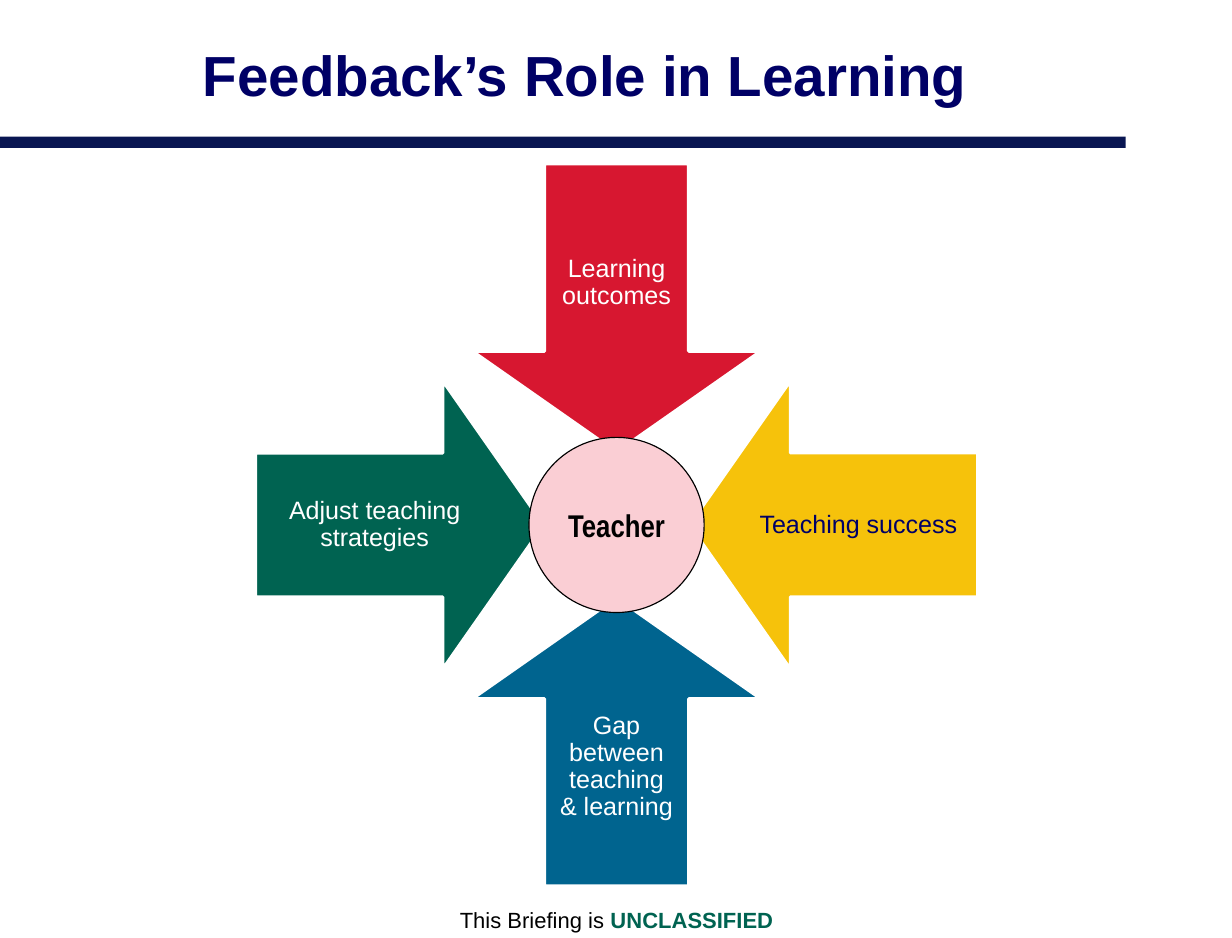
from dataclasses import dataclass

from pptx import Presentation
from pptx.dml.color import RGBColor
from pptx.enum.shapes import MSO_SHAPE as Shape
from pptx.enum.text import MSO_ANCHOR as Anchor, PP_ALIGN as Align
from pptx.util import Inches, Pt


@dataclass(frozen=True)
class Theme:
    font: str = "Arial"
    narrow_font: str = "Arial Narrow"
    navy: str = "000066"
    rule: str = "091652"
    red: str = "D71730"
    yellow: str = "F6C20B"
    blue: str = "00648F"
    green: str = "006351"
    pink: str = "FACED4"
    white: str = "FFFFFF"
    black: str = "000000"
    title_size: int = 36
    hub_size: int = 20
    label_size: int = 16
    footer_size: int = 14


THEME = Theme()


def set_font(font, size, color, bold=False, name=THEME.font):
    font.name = name
    font.size = Pt(size)
    font.bold = bold
    font.color.rgb = RGBColor.from_string(color)


def add_figure(slide, kind, box, fill, line=None, line_width=0):
    shape = slide.shapes.add_shape(kind, *map(Inches, box))
    shape.shadow.inherit = False
    shape.fill.solid()
    shape.fill.fore_color.rgb = RGBColor.from_string(fill)
    if line:
        shape.line.color.rgb = RGBColor.from_string(line)
        shape.line.width = Pt(line_width)
    else:
        shape.line.fill.background()
    return shape


def add_text(slide, box, text, size, color, bold=False, anchor=Anchor.MIDDLE, inset=None):
    frame = slide.shapes.add_textbox(*map(Inches, box)).text_frame
    frame.word_wrap = True
    frame.vertical_anchor = anchor
    if inset is not None:
        frame.margin_left = frame.margin_right = Inches(inset)
        frame.margin_top = frame.margin_bottom = Inches(inset)
    paragraph = frame.paragraphs[0]
    paragraph.text = text
    paragraph.alignment = Align.CENTER
    set_font(paragraph.font, size, color, bold)
    return paragraph


def add_header(slide, box):
    left, top, width, height = box
    add_figure(slide, Shape.RECTANGLE, (left, top + height - 0.1, width, 0.1), THEME.rule)
    add_text(slide, (left + 1.13, top, 8.09, 1.3), "Feedback’s Role in Learning",
             THEME.title_size, THEME.navy, bold=True)


def add_arrow(slide, center, direction, rotation, text, fill, color):
    side, arrow_offset, label_offset = 2.55, 1.92, 2.14
    label_length, label_breadth = 2.1, 1.27

    def centered(offset, width, height):
        x, y = (c + d * offset for c, d in zip(center, direction))
        return x - width / 2, y - height / 2, width, height

    arrow = add_figure(slide, Shape.DOWN_ARROW, centered(arrow_offset, side, side),
                       fill, THEME.white, 2)
    arrow.rotation = rotation
    arrow.adjustments[0] = 0.5
    arrow.adjustments[1] = 0.35
    size = (label_length, label_breadth) if direction[0] else (label_breadth, label_length)
    label = add_text(slide, centered(label_offset, *size), text,
                     THEME.label_size, color, inset=0.12)
    label.line_spacing = 0.9


def add_hub(slide, box):
    hub = add_figure(slide, Shape.OVAL, box, THEME.pink, THEME.black, 0.75)
    hub.text_frame.vertical_anchor = Anchor.MIDDLE
    paragraph = hub.text_frame.paragraphs[0]
    paragraph.text = "Teacher"
    paragraph.alignment = Align.CENTER
    set_font(paragraph.font, THEME.hub_size, THEME.black, True, THEME.narrow_font)


def add_cycle(slide, box):
    left, top, width, height = box
    center = left + width / 2, top + height / 2
    arrows = [
        ((0, -1), "Learning outcomes", THEME.red, THEME.white),
        ((1, 0), "Teaching success", THEME.yellow, THEME.navy),
        ((0, 1), "Gap between teaching & learning", THEME.blue, THEME.white),
        ((-1, 0), "Adjust teaching strategies", THEME.green, THEME.white),
    ]
    for index, (direction, text, fill, color) in enumerate(arrows):
        add_arrow(slide, center, direction, 90 * index, text, fill, color)
    hub_size = 1.55
    add_hub(slide, (center[0] - hub_size / 2, center[1] - hub_size / 2, hub_size, hub_size))


def add_footer(slide, box):
    paragraph = add_text(slide, box, "This Briefing is ", THEME.footer_size,
                         THEME.black, anchor=Anchor.TOP)
    marking = paragraph.add_run()
    marking.text = "UNCLASSIFIED"
    set_font(marking.font, THEME.footer_size, THEME.green, bold=True)


def main():
    presentation = Presentation()
    presentation.slide_width = Inches(10.9)
    presentation.slide_height = Inches(8.3)
    slide = presentation.slides.add_slide(presentation.slide_layouts[6])
    add_header(slide, (0, 0, 9.96, 1.31))
    add_footer(slide, (2.75, 7.97, 5.41, 0.33))
    add_cycle(slide, (2.26, 1.45, 6.39, 6.39))
    presentation.save("out.pptx")


if __name__ == "__main__":
    main()
